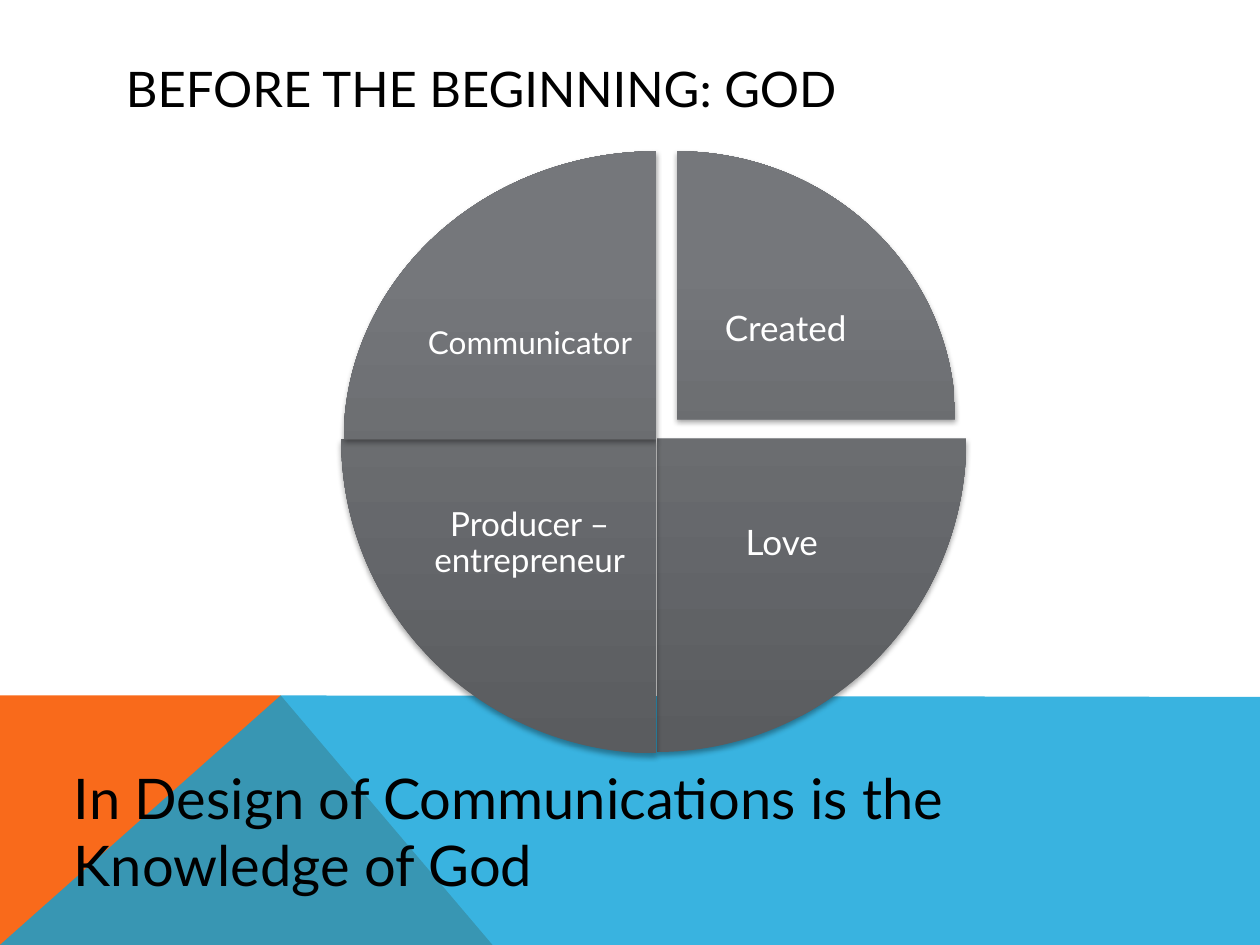
from copy import deepcopy

from lxml import etree
from pptx import Presentation
from pptx import util as u
from pptx.dml import color
from pptx.enum import shapes, text
from pptx.oxml import ns

COLORS = {
    "orange": "F96A1B",
    "blue": "08A1D9",
    "black": "000000",
    "white": "FFFFFF",
}
PIE_GRADIENT = [(0, "5A5C5F"), (0.8, "75777B"), (1, "75787C")]
FONT = "Lato"
QUARTER = 54
FULL_TURN = 4 * QUARTER

BANDS = [
    ([(0, 19.05), (0, 14.02), (5.66, 14.02), (9.93, 19.05)], "orange", 100),
    ([(0, 19.05), (5.66, 14.02), (25.4, 14.05), (25.4, 19.05)], "blue", 80),
]
QUADRANTS = [
    ("Created", 20, (8.03, 3.05, 11.23, 10.8), (13.77, 5.05, 4.14, 3.2)),
    ("Love", 20, (7.01, 2.54, 12.47, 12.62), (13.46, 9.09, 4.6, 3.76)),
    ("Producer –entrepreneur", 19, (6.88, 2.54, 12.7, 12.65), (8.33, 9.09, 4.7, 3.76)),
    ("Communicator", 18, (6.93, 3.05, 12.62, 11.61), (8.36, 5.21, 4.65, 3.45)),
]


def rgb(name):
    return color.RGBColor.from_string(COLORS[name])


def lengths(box):
    return [u.Cm(value) for value in box]


def add_alpha(color_element, percent):
    etree.SubElement(color_element, ns.qn("a:alpha"), val=str(percent * 1000))


def add_band(slide, points, fill, opacity):
    start, *rest = [tuple(lengths(point)) for point in points]
    builder = slide.shapes.build_freeform(*start)
    builder.add_line_segments(rest, close=True)
    shape = builder.convert_to_shape()
    shape.shadow.inherit = False
    shape.line.fill.background()
    shape.fill.solid()
    shape.fill.fore_color.rgb = rgb(fill)
    if opacity < 100:
        add_alpha(shape.element.spPr.find(".//" + ns.qn("a:srgbClr")), opacity)


def add_text(slide, box, content, size, fill="black", centered=False,
             anchor=text.MSO_ANCHOR.MIDDLE):
    shape = slide.shapes.add_textbox(*lengths(box))
    frame = shape.text_frame
    frame.word_wrap = True
    frame.vertical_anchor = anchor
    paragraph = frame.paragraphs[0]
    if centered:
        frame.margin_left = frame.margin_right = u.Cm(0.08)
        frame.margin_top = frame.margin_bottom = u.Cm(0.08)
        paragraph.alignment = text.PP_ALIGN.CENTER
        paragraph.line_spacing = 0.9
    run = paragraph.add_run()
    run.text = content
    run.font.name = FONT
    run.font.size = u.Pt(size)
    run.font.color.rgb = rgb(fill)


def fill_gradient(shape):
    shape.fill.gradient()
    shape.fill.gradient_angle = 90
    stop_list = shape.element.spPr.find(".//" + ns.qn("a:gsLst"))
    stop_list.append(deepcopy(stop_list[-1]))
    for stop, (position, value) in zip(shape.fill.gradient_stops, PIE_GRADIENT):
        stop.position = position
        stop.color.rgb = color.RGBColor.from_string(value)


def add_shadow(shape):
    shape.shadow.inherit = False
    effects = shape.element.spPr.find(ns.qn("a:effectLst"))
    shadow = etree.SubElement(
        effects, ns.qn("a:outerShdw"), blurRad=str(u.Pt(3.1)),
        dist=str(u.Pt(1.8)), dir="5400000", rotWithShape="0")
    shade = etree.SubElement(shadow, ns.qn("a:srgbClr"), val=COLORS["black"])
    add_alpha(shade, 35)


def add_quadrant(slide, index, label, size, pie_box, label_box):
    shape = slide.shapes.add_shape(shapes.MSO_SHAPE.PIE, *lengths(pie_box))
    start = (3 * QUARTER + index * QUARTER) % FULL_TURN
    shape.adjustments[0] = start
    shape.adjustments[1] = (start + QUARTER) % FULL_TURN
    fill_gradient(shape)
    shape.line.fill.background()
    add_shadow(shape)
    add_text(slide, label_box, label, size, "white", centered=True)


def main():
    presentation = Presentation()
    presentation.slide_width = u.Cm(25.4)
    presentation.slide_height = u.Cm(19.05)
    slide = presentation.slides.add_slide(presentation.slide_layouts[6])
    for band in BANDS:
        add_band(slide, *band)
    add_text(slide, (2.29, 1.02, 20.88, 1.52), "BEFORE THE BEGINNING: GOD", 28)
    for index, quadrant in enumerate(QUADRANTS):
        add_quadrant(slide, index, *quadrant)
    add_text(slide, (1.24, 15.27, 19.71, 3),
             "In Design of Communications is the Knowledge of God", 32,
             anchor=text.MSO_ANCHOR.TOP)
    presentation.save("out.pptx")


if __name__ == "__main__":
    main()
